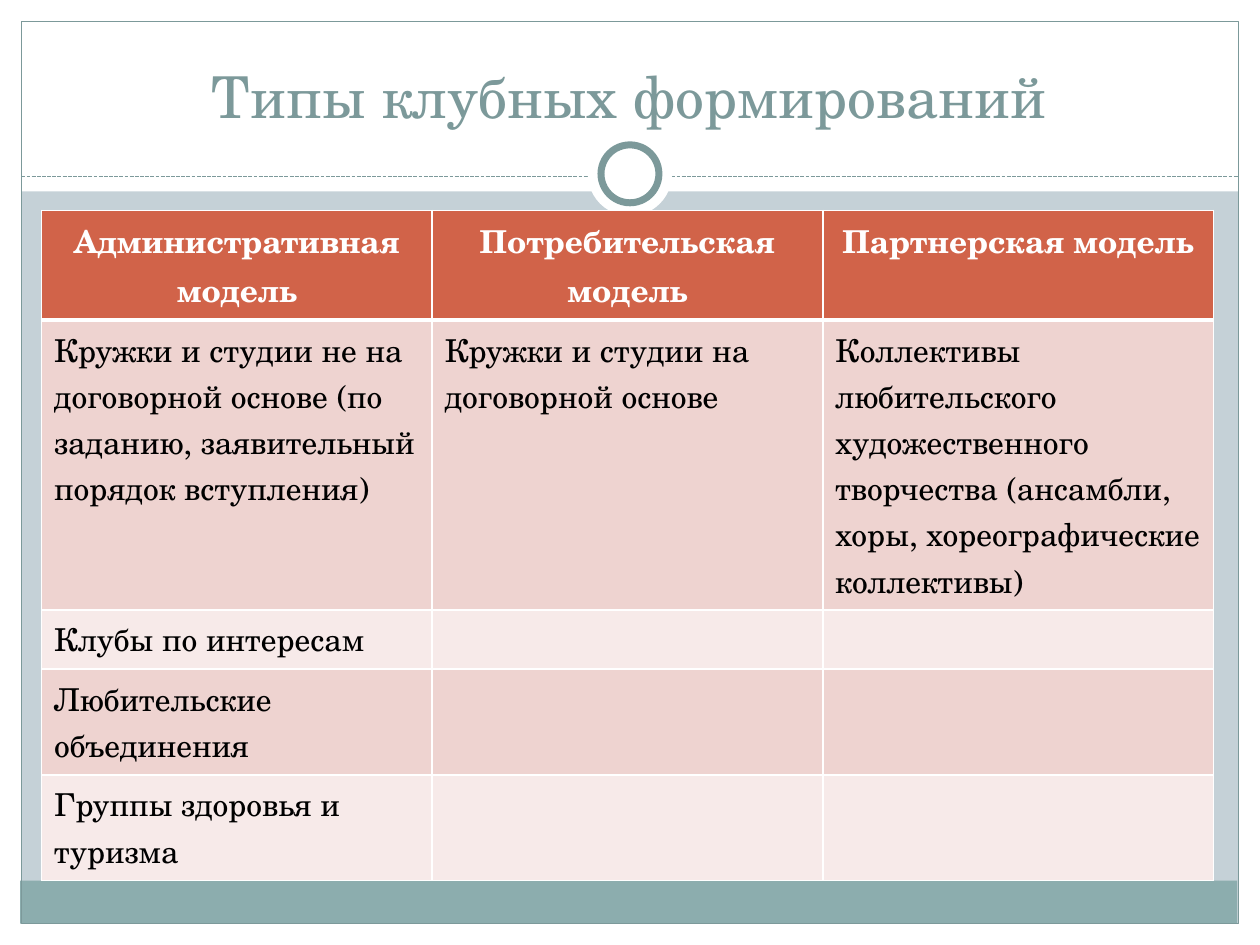
from lxml.etree import SubElement
from pptx import Presentation
from pptx.dml.color import RGBColor
from pptx.enum.dml import MSO_LINE
from pptx.enum.shapes import MSO_CONNECTOR, MSO_SHAPE
from pptx.enum.text import MSO_ANCHOR, PP_ALIGN
from pptx.oxml.ns import qn
from pptx.util import Inches, Pt

TITLE = "Типы клубных формирований"
MODELS = ["Административная модель", "Потребительская модель", "Партнерская модель"]
GROUPS = [
    [
        "Кружки и студии не на договорной основе (по заданию, заявительный порядок вступления)",
        "Кружки и студии на договорной основе",
        "Коллективы любительского художественного творчества (ансамбли, хоры, хореографические коллективы)",
    ],
    ["Клубы по интересам", "", ""],
    ["Любительские объединения", "", ""],
    ["Группы здоровья и туризма", "", ""],
]
ROW_HEIGHTS = [0.87, 2.3, 0.47, 0.84, 0.84]
COLUMN_WIDTH = 3.1

FONT = "TeX Gyre Schola"
WHITE, BLACK, TEAL, FOOTER = "FFFFFF", "000000", "7C999A", "8CADAE"
BACKGROUND, HEADER, BANDS = "C5D1D7", "D16349", ["EED3D0", "F7EAE9"]
WIDTH, HEIGHT, MARGIN = 10, 7.5, 0.17
PANELS = [
    (0, HEIGHT - MARGIN, WIDTH, MARGIN, WHITE),
    (0, 0, WIDTH, 1.52, WHITE),
    (0, 0, MARGIN, HEIGHT, WHITE),
    (WIDTH - MARGIN, 0, MARGIN, HEIGHT, WHITE),
    (0.16, 6.99, 9.66, 0.34, FOOTER),
]


def color(value):
    return RGBColor.from_string(value)


def add_panel(slide, left, top, width, height, fill=None, line=None,
              weight=0.75, kind=MSO_SHAPE.RECTANGLE):
    panel = slide.shapes.add_shape(
        kind, Inches(left), Inches(top), Inches(width), Inches(height))
    panel.shadow.inherit = False
    if fill:
        panel.fill.solid()
        panel.fill.fore_color.rgb = color(fill)
    else:
        panel.fill.background()
    if line:
        panel.line.color.rgb = color(line)
        panel.line.width = Pt(weight)
    else:
        panel.line.fill.background()


def add_circle(slide, center_y, size, **style):
    add_panel(slide, (WIDTH - size) / 2, center_y - size / 2, size, size,
              kind=MSO_SHAPE.OVAL, **style)


def write(frame, text, size=18, ink=BLACK, bold=False, align=PP_ALIGN.LEFT):
    frame.word_wrap = True
    paragraph = frame.paragraphs[0]
    paragraph.alignment = align
    paragraph.font.size = Pt(size)
    if text:
        run = paragraph.add_run()
        run.text = text
        run.font.name = FONT
        run.font.size = Pt(size)
        run.font.bold = bold
        run.font.color.rgb = color(ink)


def set_borders(cell, **weights):
    properties = cell._tc.get_or_add_tcPr()
    for side in ("L", "R", "T", "B"):
        border = SubElement(properties, qn(f"a:ln{side}"), w=str(Pt(weights.get(side, 1))))
        fill = SubElement(border, qn("a:solidFill"))
        SubElement(fill, qn("a:srgbClr"), val=WHITE)


def add_frame(slide):
    for left, top, width, height, fill in PANELS:
        add_panel(slide, left, top, width, height, fill)
    add_panel(slide, MARGIN, MARGIN, WIDTH - 2 * MARGIN, HEIGHT - 2 * MARGIN, line=TEAL)
    divider = slide.shapes.add_connector(
        MSO_CONNECTOR.STRAIGHT, Inches(MARGIN), Inches(1.4),
        Inches(WIDTH - MARGIN), Inches(1.4))
    divider.line.color.rgb = color(TEAL)
    divider.line.width = Pt(0.75)
    divider.line.dash_style = MSO_LINE.SQUARE_DOT
    SubElement(divider._element.spPr, qn("a:effectLst"))
    add_circle(slide, 1.38, 0.67, fill=WHITE)
    add_circle(slide, 1.38, 0.46, fill=WHITE, line=TEAL, weight=4)


def add_models(slide):
    rows = [MODELS] + GROUPS
    table = slide.shapes.add_table(
        len(rows), len(MODELS), Inches(0.33), Inches(1.67),
        Inches(COLUMN_WIDTH * len(MODELS)), Inches(sum(ROW_HEIGHTS))).table
    for column in table.columns:
        column.width = Inches(COLUMN_WIDTH)
    for r, texts in enumerate(rows):
        table.rows[r].height = Inches(ROW_HEIGHTS[r])
        for c, text in enumerate(texts):
            cell = table.cell(r, c)
            set_borders(cell, T=3 if r == 1 else 1, B=3 if r == 0 else 1)
            cell.fill.solid()
            if r == 0:
                cell.fill.fore_color.rgb = color(HEADER)
                write(cell.text_frame, text, ink=WHITE, bold=True, align=PP_ALIGN.CENTER)
            else:
                cell.fill.fore_color.rgb = color(BANDS[(r - 1) % 2])
                write(cell.text_frame, text)


def main():
    deck = Presentation()
    deck.slide_width, deck.slide_height = Inches(WIDTH), Inches(HEIGHT)
    slide = deck.slides.add_slide(deck.slide_layouts[6])
    slide.background.fill.solid()
    slide.background.fill.fore_color.rgb = color(BACKGROUND)
    add_frame(slide)
    title = slide.shapes.add_textbox(Inches(0.33), Inches(0.25), Inches(9.33), Inches(0.83))
    title.text_frame.vertical_anchor = MSO_ANCHOR.BOTTOM
    write(title.text_frame, TITLE, size=33, ink=TEAL, align=PP_ALIGN.CENTER)
    add_models(slide)
    deck.save("out.pptx")


if __name__ == "__main__":
    main()
